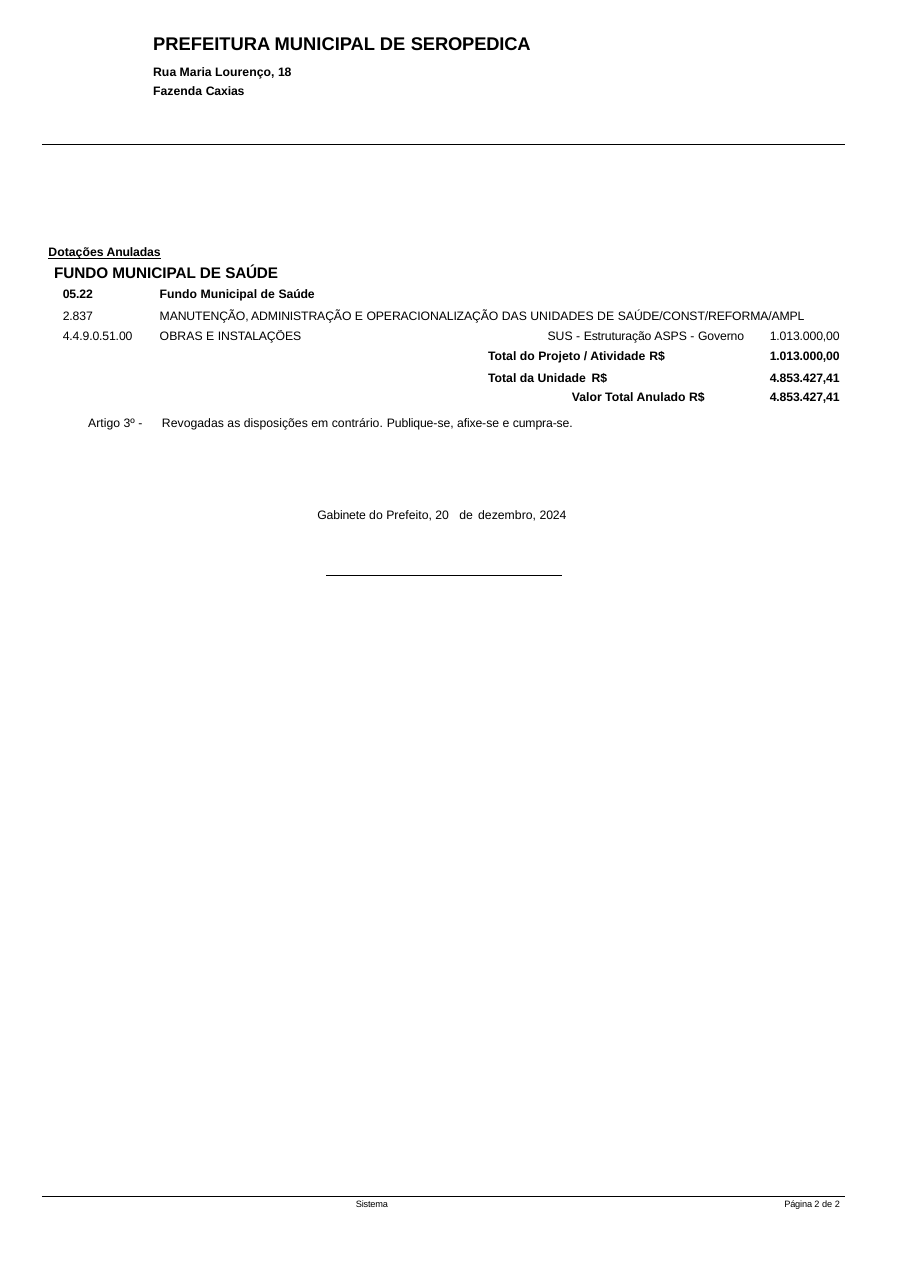
from lxml import etree
from pptx import Presentation
from pptx import util as u
from pptx.dml.color import RGBColor
from pptx.enum import shapes, text
from pptx.oxml.ns import qn

BLACK = RGBColor(0, 0, 0)
FONT = "Arial"
TIGHT = "-10"

# Text between bars is set tight.
BODY = dict(size=8)
BOLD = dict(size=8, bold=True)
HEAD = dict(size=8, bold=True, underline=True)
FUND = dict(size=10, bold=True)
TITLE = dict(size=12, bold=True)
FOOT = dict(size=6)

RULES = [(0.38, 1.31, 7.29), (2.96, 5.22, 2.14), (0.38, 10.86, 7.29)]

BOXES = [
    (1.39, 0.29, 3.49, 0.62, [
        ("PREFEITURA MUNICIPAL DE |SEROPEDICA", TITLE, {}),
        ("Rua Maria Lourenço,| 18", BOLD, dict(space_before=u.Pt(4.5), line_spacing=1.25)),
        ("Fazenda |Caxias", BOLD, dict(line_spacing=1.25))]),
    (0.44, 2.22, 2.14, 0.36, [("Dotações| Anuladas", HEAD, {})]),
    (0.49, 2.39, 2.08, 0.19, [("FUNDO MUNICIPAL DE |SAÚDE", FUND, {})]),
    (0.57, 2.6, 0.35, 0.34, [
        ("|05.22", BOLD, {}),
        ("|2.837", BODY, dict(space_before=u.Pt(4.7)))]),
    (1.45, 2.6, 5.96, 0.34, [
        ("Fundo Municipal de |Saúde", BOLD, {}),
        ("|MANUTENÇÃO, ADMINISTRAÇÃO |E |OPERACIONALIZAÇÃO |DAS UNIDADES DE |SAÚDE/CONST/REFORMA/AMPL",
         BODY, dict(space_before=u.Pt(4.7)))]),
    (0.8, 3.77, 0.55, 0.14, [("Artigo 3º |-", BODY, {})]),
    (1.47, 3.77, 3.78, 0.14, [
        ("Revogadas as disposições em contrário. |Publique-|se,| afixe-|se e| cumpra-se.", BODY, {})]),
    (2.88, 4.6, 2.35, 0.14, [
        ("|Gabinete |do Prefeito, 20\tde\tdezembro, |2024", BODY, dict(tabs=(1.29, 1.46)))]),
    (3.23, 10.88, 0.36, 0.11, [("|Sistema", FOOT, {})]),
    (7.12, 10.88, 0.56, 0.11, [("|Página |2 de |2", FOOT, {})]),
]

COLS = [0.8, 2.25, 3.29, 0.78]
ROWS = [
    (0.16, 0, 1.38, BODY, ["|4.4.9.0.51.00", "OBRAS E |INSTALAÇÕES",
                           "SUS - |Estruturação| ASPS - |Governo", "|1.013.000,00"], {}),
    (0.19, 0.02, 0.84, BOLD, ["", "", "Total do Projeto / Atividade |R$", "|1.013.000,00"], {}),
    (0.19, 0.03, 0.84, BOLD, ["", "", "Total da Unidade\t|R$", "|4.853.427,41"], dict(tabs=(0.94,))),
    (0.15, 0.01, 1.6, BOLD, ["", "", "Valor Total Anulado| R$", "|4.853.427,41"], {}),
]


def write(p, content, font, layout):
    for name, value in layout.items():
        if name == "tabs":
            stops = etree.SubElement(p._p.get_or_add_pPr(), qn("a:tabLst"))
            for pos in value:
                etree.SubElement(stops, qn("a:tab"), pos=str(u.Inches(pos)), algn="l")
        else:
            setattr(p, name, value)
    for i, part in enumerate(content.split("|")):
        if not part:
            continue
        r = p.add_run()
        r.text = part
        for name, value in dict(font, name=FONT, size=u.Pt(font["size"])).items():
            setattr(r.font, name, value)
        r.font.color.rgb = BLACK
        if i % 2:
            r._r.get_or_add_rPr().set("spc", TIGHT)
    if not content:
        etree.SubElement(p._p, qn("a:endParaRPr"), sz="800")


def add_rule(s, x, y, w):
    c = s.shapes.add_connector(shapes.MSO_CONNECTOR.STRAIGHT, u.Inches(x), u.Inches(y),
                               u.Inches(x + w), u.Inches(y))
    c.line.color.rgb = BLACK
    c.line.width = u.Pt(0.75)
    etree.SubElement(c._element.spPr, qn("a:effectLst"))


def add_text(s, x, y, w, h, paragraphs):
    tf = s.shapes.add_textbox(*map(u.Inches, (x, y, w, h))).text_frame
    tf.word_wrap = True
    for side in ("left", "top", "right", "bottom"):
        setattr(tf, "margin_" + side, 0)
    for i, item in enumerate(paragraphs):
        write(tf.add_paragraph() if i else tf.paragraphs[0], *item)


def add_budget(s, x, y):
    size = (sum(COLS), sum(row[0] for row in ROWS))
    table = s.shapes.add_table(len(ROWS), len(COLS), *map(u.Inches, (x, y, *size))).table
    table.first_row = table.horz_banding = False
    for col, width in zip(table.columns, COLS):
        col.width = u.Inches(width)
    for i, (height, top, indent, font, labels, layout) in enumerate(ROWS):
        table.rows[i].height = u.Inches(height)
        for j, (label, left) in enumerate(zip(labels, (0.03, 0.11, indent, 0.07))):
            cell = table.cell(i, j)
            cell.fill.background()
            cell.margin_left, cell.margin_top = u.Inches(left), u.Inches(top)
            cell.margin_right = cell.margin_bottom = 0
            p = cell.text_frame.paragraphs[0]
            write(p, label, font, layout if j == 2 else {})
            if j == 3:
                p.alignment = text.PP_ALIGN.CENTER


def main():
    prs = Presentation()
    prs.slide_width, prs.slide_height = u.Inches(8.26), u.Inches(11.69)
    s = prs.slides.add_slide(prs.slide_layouts[6])
    for rule in RULES:
        add_rule(s, *rule)
    for box in BOXES:
        add_text(s, *box)
    add_budget(s, 0.54, 2.99)
    prs.save("out.pptx")


if __name__ == "__main__":
    main()
